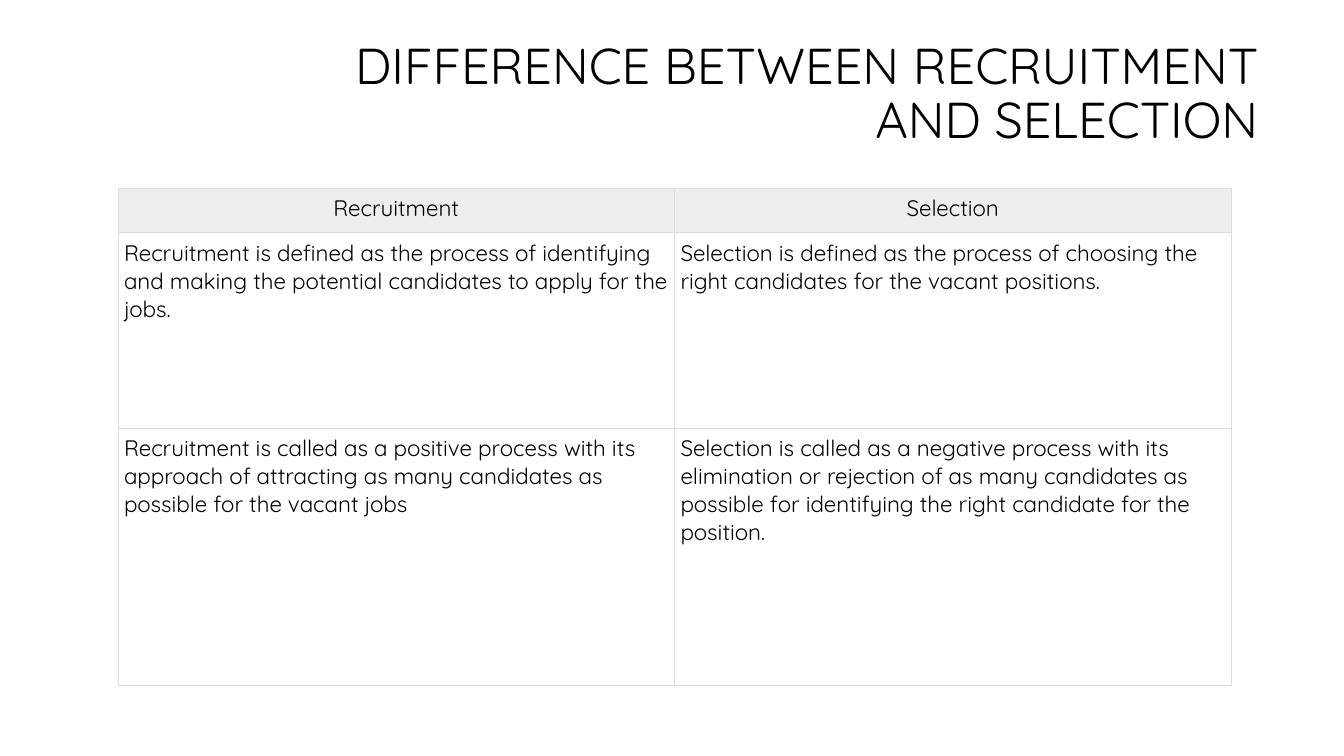
from lxml import etree
from pptx import Presentation
from pptx.dml.color import RGBColor
from pptx.enum.text import MSO_ANCHOR, PP_ALIGN
from pptx.oxml.ns import qn
from pptx.util import Inches, Pt

LEFT, CENTER, RIGHT = PP_ALIGN.LEFT, PP_ALIGN.CENTER, PP_ALIGN.RIGHT
MIDDLE, TOP = MSO_ANCHOR.MIDDLE, MSO_ANCHOR.TOP

BLACK = RGBColor(0x00, 0x00, 0x00)
WHITE = RGBColor(0xFF, 0xFF, 0xFF)
HEADER_GRAY = RGBColor(0xEE, 0xEE, 0xEE)
BORDER_GRAY = RGBColor(0xDD, 0xDD, 0xDD)
FONT = "Quicksand"
TITLE_ONLY = 5

TABLE_LEFT, TABLE_TOP = 1.17, 1.87
COLUMN_WIDTH = 5.52
ROW_HEIGHTS = (0.44, 1.94, 2.55)
CELL_INSET = 0.06
BORDER_WIDTH = 0.6

COMPARISON = (
    ("Recruitment", "Selection"),
    ("Recruitment is defined as the process of identifying and making the "
     "potential candidates to apply for the jobs.",
     "Selection is defined as the process of choosing the right candidates "
     "for the vacant positions."),
    ("Recruitment is called as a positive process with its approach of "
     "attracting as many candidates as possible for the vacant jobs",
     "Selection is called as a negative process with its elimination or "
     "rejection of as many candidates as possible for identifying the right "
     "candidate for the position."),
)


def write_text(text_frame, text, size, align=LEFT, line_spacing=1.0):
    text_frame.word_wrap = True
    paragraph = text_frame.paragraphs[0]
    paragraph.alignment = align
    paragraph.line_spacing = line_spacing
    paragraph.space_before = Pt(0)
    run = paragraph.add_run()
    run.text = text
    run.font.name = FONT
    run.font.size = Pt(size)
    run.font.bold = False
    run.font.color.rgb = BLACK


def add_title(slide, text):
    title = slide.shapes.title
    title.left, title.top = Inches(3.41), Inches(0.41)
    title.width, title.height = Inches(9.17), Inches(1.07)
    title.text_frame.vertical_anchor = MIDDLE
    write_text(title.text_frame, text, size=36, align=RIGHT, line_spacing=0.9)


def set_borders(cell):
    """Line all four sides; the lines must precede the fill in the cell XML."""
    properties = cell._tc.get_or_add_tcPr()
    for index, side in enumerate(("lnL", "lnR", "lnT", "lnB")):
        line = etree.Element(qn(f"a:{side}"), w=str(int(Pt(BORDER_WIDTH))))
        fill = etree.SubElement(line, qn("a:solidFill"))
        etree.SubElement(fill, qn("a:srgbClr"), val=str(BORDER_GRAY))
        properties.insert(index, line)


def format_cell(cell, text, is_header):
    cell.margin_left = cell.margin_right = Inches(CELL_INSET)
    cell.margin_top = cell.margin_bottom = Inches(CELL_INSET)
    cell.vertical_anchor = TOP
    if is_header:
        cell.fill.solid()
        cell.fill.fore_color.rgb = HEADER_GRAY
    else:
        cell.fill.background()
    set_borders(cell)
    write_text(cell.text_frame, text, size=16,
               align=CENTER if is_header else LEFT)


def add_comparison_table(slide, rows):
    column_count = len(rows[0])
    table = slide.shapes.add_table(
        len(rows), column_count, Inches(TABLE_LEFT), Inches(TABLE_TOP),
        Inches(COLUMN_WIDTH * column_count), Inches(sum(ROW_HEIGHTS))).table
    table.first_row = table.horz_banding = False
    for column in table.columns:
        column.width = Inches(COLUMN_WIDTH)
    for row_index, (texts, height) in enumerate(zip(rows, ROW_HEIGHTS)):
        table.rows[row_index].height = Inches(height)
        for column_index, text in enumerate(texts):
            format_cell(table.cell(row_index, column_index), text,
                        is_header=row_index == 0)


def main():
    presentation = Presentation()
    presentation.slide_width = Inches(13.33)
    presentation.slide_height = Inches(7.5)
    slide = presentation.slides.add_slide(presentation.slide_layouts[TITLE_ONLY])
    slide.background.fill.solid()
    slide.background.fill.fore_color.rgb = WHITE
    add_title(slide, "DIFFERENCE BETWEEN RECRUITMENT AND SELECTION")
    add_comparison_table(slide, COMPARISON)
    presentation.save("out.pptx")


if __name__ == "__main__":
    main()
